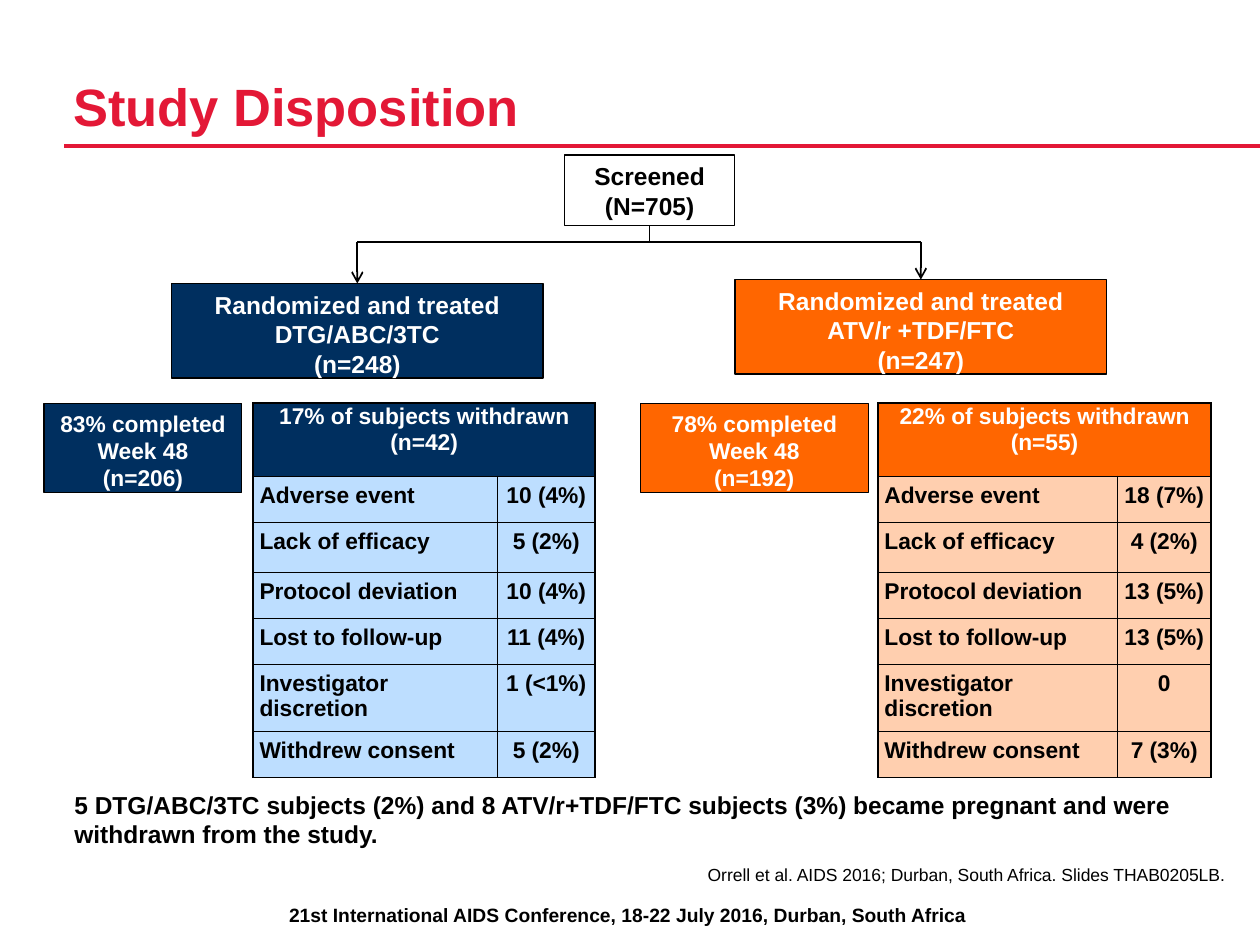
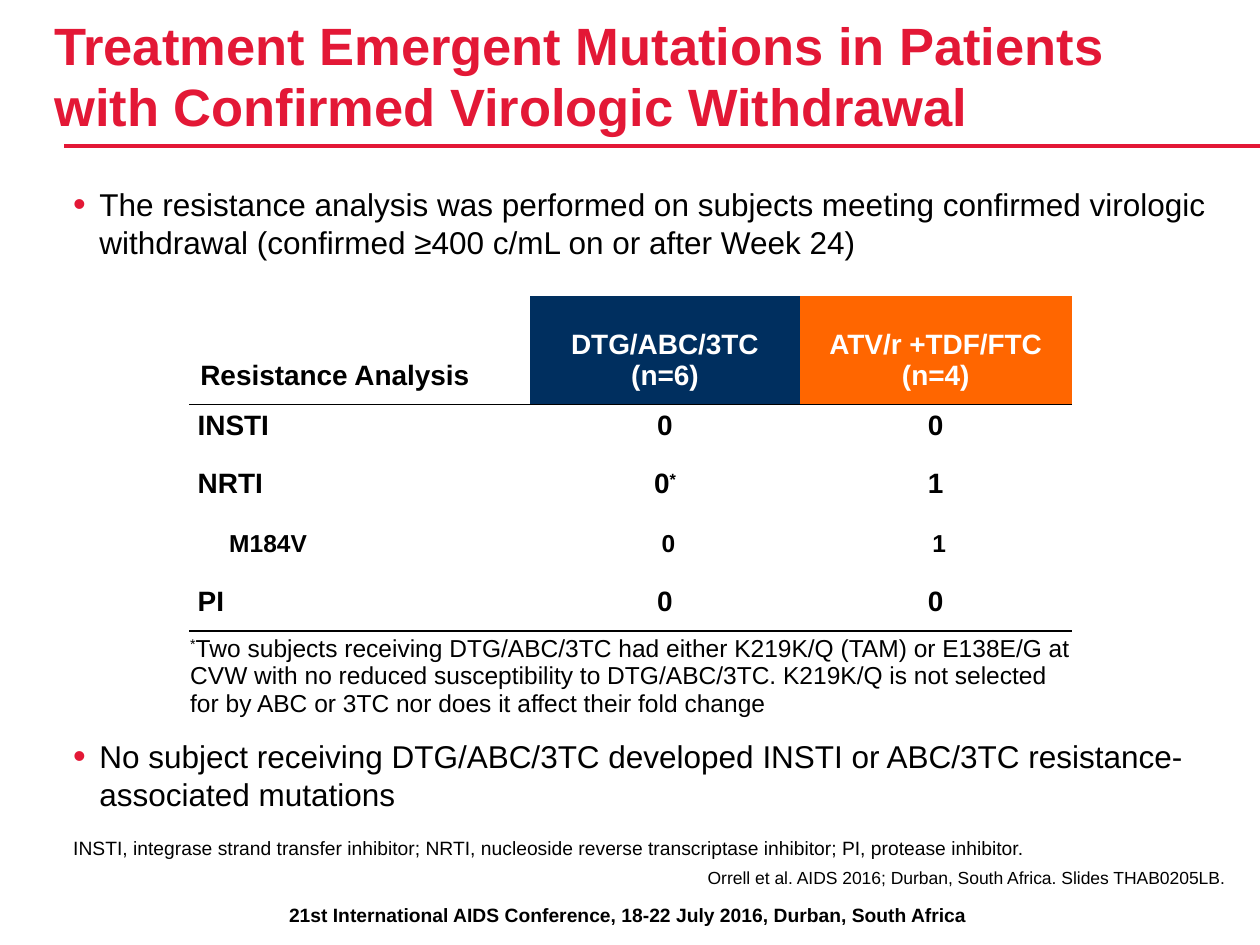
from dataclasses import dataclass, replace
from typing import NamedTuple, Optional

from lxml.etree import SubElement
from pptx import Presentation
from pptx.dml.color import RGBColor
from pptx.enum.shapes import MSO_CONNECTOR, MSO_SHAPE
from pptx.enum.text import MSO_ANCHOR, PP_ALIGN
from pptx.oxml import parse_xml
from pptx.oxml.ns import nsdecls, qn
from pptx.util import Pt

BLACK = RGBColor(0x00, 0x00, 0x00)
WHITE = RGBColor(0xFF, 0xFF, 0xFF)
RED = RGBColor(0xE3, 0x18, 0x36)
NAVY = RGBColor(0x00, 0x2F, 0x5F)
ORANGE = RGBColor(0xFF, 0x66, 0x00)
PALE_BLUE = RGBColor(0xBD, 0xDE, 0xFF)
PALE_ORANGE = RGBColor(0xFF, 0xCF, 0xAF)

FONT = "Arial"
CONFERENCE = "21st International AIDS Conference, 18-22 July 2016, Durban, South Africa"
CITATION = "Orrell et al. AIDS 2016; Durban, South Africa. Slides THAB0205LB."
REASONS = ["Adverse event", "Lack of efficacy", "Protocol deviation",
           "Lost to follow-up", "Investigator discretion", "Withdrew consent"]


class Box(NamedTuple):
    left: float
    top: float
    width: float
    height: float

    def points(self) -> list:
        return [Pt(value) for value in self]


@dataclass(frozen=True)
class TextStyle:
    size: float
    color: RGBColor = BLACK
    bold: bool = False
    align: PP_ALIGN = PP_ALIGN.LEFT
    anchor: MSO_ANCHOR = MSO_ANCHOR.TOP
    insets: tuple = (0, 0, 0, 0)
    after: float = 0
    line_spacing: Optional[float] = None
    indent: float = 0
    bullet: bool = False
    gap: float = 0  # space before every paragraph but the first


@dataclass(frozen=True)
class Arm:
    """One treatment arm of the disposition chart."""
    color: RGBColor
    pale: RGBColor
    treated: Box
    treated_lines: list
    completed: Box
    completed_lines: list
    table_left: float
    columns: tuple
    withdrawn_lines: list
    counts: list


TITLE = TextStyle(30, RED, True, anchor=MSO_ANCHOR.BOTTOM, line_spacing=35)
FOOTER = TextStyle(11, bold=True, align=PP_ALIGN.CENTER, insets=(7.2, 3.6, 7.2, 3.6))
SOURCE = TextStyle(10, align=PP_ALIGN.RIGHT)
BODY = TextStyle(18, after=3, bullet=True, gap=269)
BOX_LARGE = replace(FOOTER, size=14, color=WHITE)
BOX_SMALL = replace(BOX_LARGE, size=13)
REASON = TextStyle(13, bold=True, insets=(3.6,) * 4)
COUNT = replace(REASON, align=PP_ALIGN.CENTER)
WITHDRAWN = replace(COUNT, color=WHITE, insets=(0.7,) * 4)

ARMS = [
    Arm(NAVY, PALE_BLUE, Box(98, 162, 212.4, 54),
        ["Randomized and treated", "DTG/ABC/3TC", "(n=248)"],
        Box(25.2, 230.4, 113, 51), ["83% completed Week 48", "(n=206)"],
        144.7, (139.5, 55.8), ["17% of subjects withdrawn", "(n=42)"],
        ["10 (4%)", "5 (2%)", "10 (4%)", "11 (4%)", "1 (<1%)", "5 (2%)"]),
    Arm(ORANGE, PALE_ORANGE, Box(420, 159.8, 212.4, 54),
        ["Randomized and treated", "ATV/r +TDF/FTC", "(n=247)"],
        Box(365.8, 230.4, 130.3, 51), ["78% completed Week 48", "(n=192)"],
        501.8, (136.8, 53.3), ["22% of subjects withdrawn", "(n=55)"],
        ["18 (7%)", "4 (2%)", "13 (5%)", "13 (5%)", "0", "7 (3%)"]),
]


def add_bullet(paragraph) -> None:
    properties = paragraph._p.get_or_add_pPr()
    properties.set("marL", str(Pt(15)))
    properties.set("indent", str(-Pt(15)))
    color = SubElement(properties, qn("a:buClr"))
    SubElement(color, qn("a:srgbClr")).set("val", str(RED))
    SubElement(properties, qn("a:buSzPct")).set("val", "115000")
    SubElement(properties, qn("a:buFont")).set("typeface", FONT)
    SubElement(properties, qn("a:buChar")).set("char", "•")


def write_text(text_frame, lines: list, style: TextStyle) -> None:
    """Write one paragraph per line; an asterisk becomes a superscript."""
    for number, line in enumerate(lines):
        paragraph = text_frame.paragraphs[0] if number == 0 else text_frame.add_paragraph()
        if style.bullet:
            add_bullet(paragraph)
        elif style.indent:
            paragraph._p.get_or_add_pPr().set("marL", str(Pt(style.indent)))
        formats = {"alignment": style.align, "space_after": Pt(style.after),
                   "space_before": Pt(style.gap if number else 0)}
        if style.line_spacing:
            formats["line_spacing"] = Pt(style.line_spacing)
        for name, value in formats.items():
            setattr(paragraph, name, value)
        for part in filter(None, line.partition("*")):
            run = paragraph.add_run()
            run.text = part
            for name, value in {"name": FONT, "size": Pt(style.size), "bold": style.bold}.items():
                setattr(run.font, name, value)
            run.font.color.rgb = style.color
            if part == "*":
                run._r.get_or_add_rPr().set("baseline", "30000")


def set_margins(target, style: TextStyle) -> None:
    for side, inset in zip(("left", "top", "right", "bottom"), style.insets):
        setattr(target, f"margin_{side}", Pt(inset))
    target.vertical_anchor = style.anchor


def fill_frame(text_frame, lines: list, style: TextStyle) -> None:
    text_frame.word_wrap = True
    set_margins(text_frame, style)
    write_text(text_frame, lines, style)


def add_text(slide, box: Box, lines: list, style: TextStyle) -> None:
    fill_frame(slide.shapes.add_textbox(*box.points()).text_frame, lines, style)


def add_box(slide, box: Box, lines: list, style: TextStyle, fill: RGBColor, line: float = 0.75):
    shape = slide.shapes.add_shape(MSO_SHAPE.RECTANGLE, *box.points())
    shape.shadow.inherit = False
    shape.fill.solid()
    shape.fill.fore_color.rgb = fill
    shape.line.color.rgb = BLACK
    shape.line.width = Pt(line)
    fill_frame(shape.text_frame, lines, style)
    return shape


def add_line(slide, start: tuple, end: tuple, color: RGBColor = BLACK,
             width: float = 1, arrow: bool = False):
    points = [Pt(value) for value in start + end]
    connector = slide.shapes.add_connector(MSO_CONNECTOR.STRAIGHT, *points)
    connector.line.color.rgb = color
    connector.line.width = Pt(width)
    if arrow:
        SubElement(connector.line._get_or_add_ln(), qn("a:tailEnd")).set("type", "arrow")
    SubElement(connector._element.spPr, qn("a:effectLst"))
    return connector


def add_table(slide, left: float, top: float, columns: tuple, rows: tuple):
    box = Box(left, top, sum(columns), sum(rows))
    table = slide.shapes.add_table(len(rows), len(columns), *box.points()).table
    table.first_row = table.horz_banding = False
    for column, width in zip(table.columns, columns):
        column.width = Pt(width)
    for row, height in zip(table.rows, rows):
        row.height = Pt(height)
    return table


def fill_cell(cell, lines: list, style: TextStyle, fill: Optional[RGBColor], borders: str) -> None:
    """Format a cell; borders lists the black sides out of L, R, T and B."""
    set_margins(cell, style)
    write_text(cell.text_frame, lines, style)
    if fill is None:
        cell.fill.background()
    else:
        cell.fill.solid()
        cell.fill.fore_color.rgb = fill
    set_borders(cell, borders)


def set_borders(cell, borders: str) -> None:
    black = f'<a:solidFill><a:srgbClr val="{BLACK}"/></a:solidFill>'
    for position, side in enumerate("LRTB"):
        paint = black if side in borders else "<a:noFill/>"
        border = parse_xml(f'<a:ln{side} {nsdecls("a")} w="{Pt(1)}">{paint}</a:ln{side}>')
        cell._tc.get_or_add_tcPr().insert(position, border)


def add_slide(presentation, title: str, title_box: Box, source_top: float):
    """Start a slide with the shared title, rule, footer and citation."""
    slide = presentation.slides.add_slide(presentation.slide_layouts[6])
    add_text(slide, Box(4.3, 512.6, 709.2, 21), [CONFERENCE], FOOTER)
    add_line(slide, (36.7, 83.5), (720, 83.5), RED, 2)
    add_text(slide, title_box, [title], TITLE)
    add_text(slide, Box(41.8, source_top, 658, 14.4), [CITATION], SOURCE)
    return slide


def add_arm(slide, arm: Arm, bar_y: float) -> None:
    treated = add_box(slide, arm.treated, arm.treated_lines, BOX_LARGE, arm.color)
    center = arm.treated.left + arm.treated.width / 2
    arrow = add_line(slide, (center, bar_y), (center, arm.treated.top), arrow=True)
    arrow.end_connect(treated, 0)
    add_box(slide, arm.completed, arm.completed_lines, BOX_SMALL, arm.color)

    # Withdrawal reasons
    rows = (41.8, 26.3, 28.6, 26.3, 26.3, 36.5, 26.3)
    table = add_table(slide, arm.table_left, 230.4, arm.columns, rows)
    table.cell(0, 0).merge(table.cell(0, 1))
    fill_cell(table.cell(0, 0), arm.withdrawn_lines, WITHDRAWN, arm.color, "LRTB")
    set_borders(table.cell(0, 1), "LRTB")
    for row, (reason, count) in enumerate(zip(REASONS, arm.counts), 1):
        fill_cell(table.cell(row, 0), [reason], REASON, arm.pale, "LRTB")
        fill_cell(table.cell(row, 1), [count], COUNT, arm.pale, "LRTB")


def build_disposition(presentation) -> None:
    slide = add_slide(presentation, "Study Disposition", Box(41.8, 12.2, 594, 66.2), 493.9)

    # Flow from screening to the two arms
    bar_y = 138.2
    screened_box = Box(322.6, 88.6, 97.2, 40.3)
    screened = add_box(slide, screened_box, ["Screened", "(N=705)"],
                       replace(BOX_LARGE, color=BLACK), WHITE, 1)
    center = screened_box.left + screened_box.width / 2
    stem = add_line(slide, (center, screened_box.top + screened_box.height), (center, bar_y))
    stem.begin_connect(screened, 2)
    ends = [(arm.treated.left + arm.treated.width / 2, bar_y) for arm in ARMS]
    add_line(slide, *ends)
    for arm in ARMS:
        add_arm(slide, arm, bar_y)

    add_text(slide, Box(42.5, 451.4, 663, 34),
             ["5 DTG/ABC/3TC subjects (2%) and 8 ATV/r+TDF/FTC subjects (3%) "
              "became pregnant and were withdrawn from the study."], TextStyle(14, bold=True))


def build_mutations(presentation) -> None:
    slide = add_slide(presentation,
                      "Treatment Emergent Mutations in Patients with Confirmed Virologic Withdrawal",
                      Box(31, 12.2, 605, 66.2), 495.4)
    add_text(slide, Box(41.8, 105.8, 658, 359),
             ["The resistance analysis was performed on subjects meeting confirmed virologic "
              "withdrawal (confirmed ≥400 c/mL on or after Week 24)",
              "No subject receiving DTG/ABC/3TC developed INSTI or ABC/3TC "
              "resistance-associated mutations"], BODY)
    add_text(slide, Box(41.8, 462.2, 658, 28.8),
             ["INSTI, integrase strand transfer inhibitor; NRTI, nucleoside reverse "
              "transcriptase inhibitor; PI, protease inhibitor."],
             TextStyle(11, anchor=MSO_ANCHOR.BOTTOM, after=3))

    # Resistance table: header, mutation classes, footnote
    table = add_table(slide, 108, 169.2, (195, 154, 155.5), (61.9, 33.1, 30.2, 33.1, 33.1, 48))
    header = TextStyle(16, bold=True, anchor=MSO_ANCHOR.BOTTOM, insets=(0.7, 0.7, 0.7, 7.2))
    arm_header = replace(header, color=WHITE, align=PP_ALIGN.CENTER)
    fill_cell(table.cell(0, 0), ["Resistance Analysis"], replace(header, indent=5.8), None, "B")
    fill_cell(table.cell(0, 1), ["DTG/ABC/3TC", "(n=6)"], arm_header, NAVY, "B")
    fill_cell(table.cell(0, 2), ["ATV/r +TDF/FTC", "(n=4)"], arm_header, ORANGE, "B")

    upper = TextStyle(16, bold=True, insets=(0.7, 3.6, 0.7, 3.6), indent=4.3)
    middle = replace(upper, anchor=MSO_ANCHOR.MIDDLE, insets=(0.7,) * 4)
    mutation = replace(middle, size=14, indent=22.3)
    results = [("INSTI", "0", "0", upper, 0, "T"), ("NRTI", "0*", "1", upper, 0, ""),
               ("M184V", "0", "1", mutation, 4, ""), ("PI", "0", "0", middle, 0, "B")]
    for row, (name, *counts, style, shift, borders) in enumerate(results, 1):
        fill_cell(table.cell(row, 0), [name], style, None, borders)
        count_style = replace(style, align=PP_ALIGN.CENTER, indent=shift)
        for column, count in enumerate(counts, 1):
            fill_cell(table.cell(row, column), [count], count_style, None, borders)

    table.cell(5, 0).merge(table.cell(5, 2))
    fill_cell(table.cell(5, 0),
              ["*Two subjects receiving DTG/ABC/3TC had either K219K/Q (TAM) or E138E/G at CVW "
               "with no reduced susceptibility to DTG/ABC/3TC. K219K/Q is not selected for by "
               "ABC or 3TC nor does it affect their fold change"],
              replace(middle, size=14, bold=False, indent=0), None, "T")
    for column in (1, 2):
        set_borders(table.cell(5, column), "T")


def main() -> None:
    presentation = Presentation()
    presentation.slide_width, presentation.slide_height = Pt(720), Pt(540)
    build_disposition(presentation)
    build_mutations(presentation)
    presentation.save("out.pptx")


if __name__ == "__main__":
    main()
